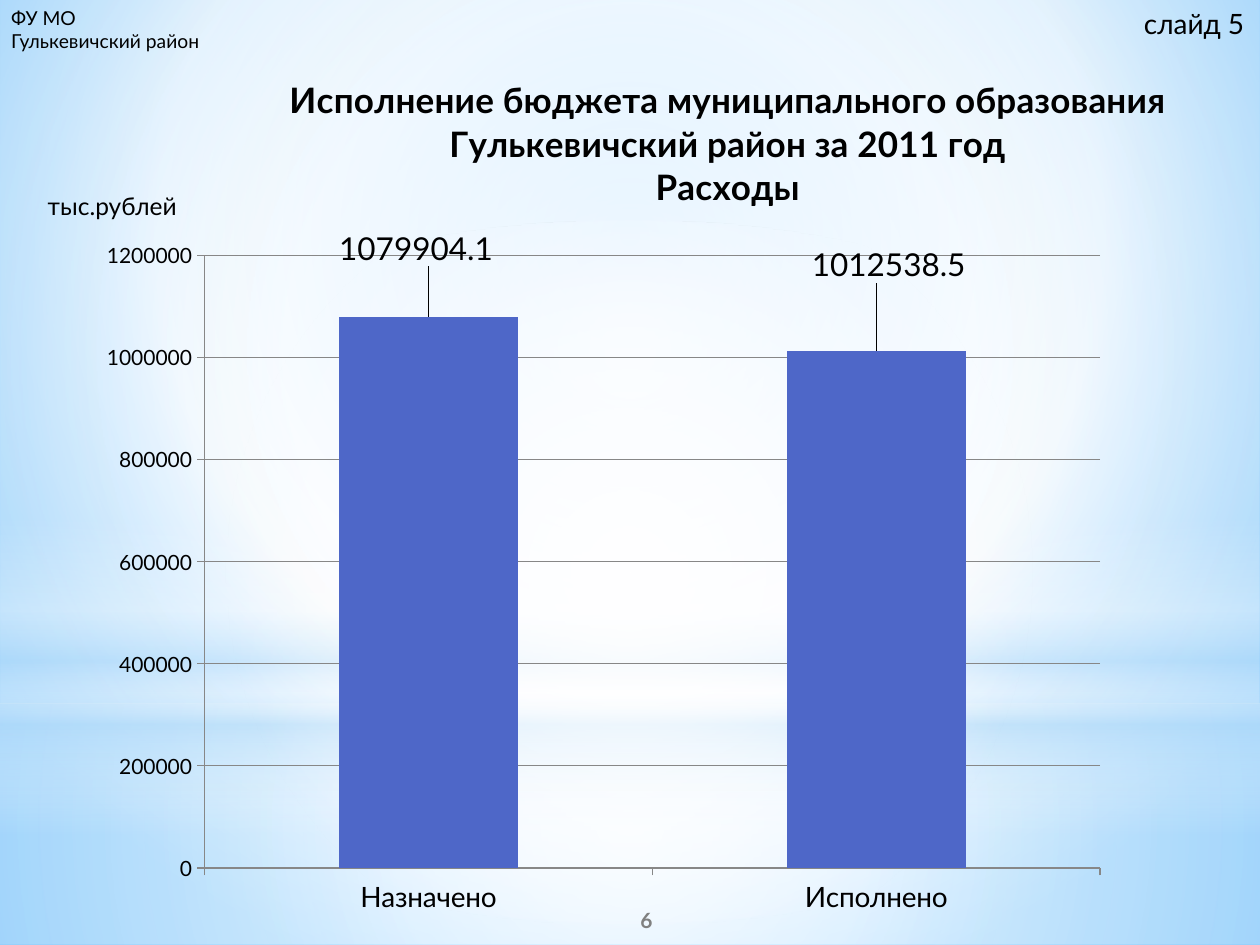
"""Build the budget expenditure slide with a column chart of planned and actual spending."""
import pptx
import pptx.chart.data
import pptx.dml.color
import pptx.enum.chart
import pptx.enum.shapes
import pptx.enum.text
import pptx.oxml
import pptx.oxml.ns
import pptx.util

Pt = pptx.util.Pt
ALIGN = pptx.enum.text.PP_ALIGN
ANCHOR = pptx.enum.text.MSO_ANCHOR
SHAPE = pptx.enum.shapes.MSO_SHAPE
CHART = pptx.enum.chart
FONT = "Lato"
GRID = "878787"
CENTER = (50, 50, 50, 50)

BACKDROP = [(0, "9ED5FF", 100), (60, "FFFFFF", 100), (100, "5BB9FF", 100)]
BACKDROP_FOCUS = (20, 10, 20, 60)
LAYERS = [
    (SHAPE.RECTANGLE, (0, 401.8, 720, 138.2), CENTER,
     [(0, "FFFFFF", 91), (37, "FFFFFF", 76), (100, "B4DCFA", 79)]),
    (SHAPE.RECTANGLE, (0, 0, 720, 401.8), CENTER,
     [(0, "FFFFFF", 89), (48, "FFFFFF", 62), (100, "B4DCFA", 79)]),
    (SHAPE.RECTANGLE, (0, 296.6, 720, 180), None,
     [(0, "FFFFFF", 0), (29, "FFFFFF", 30), (45, "B4DCFA", 40),
      (55, "FFFFFF", 26), (65, "B4DCFA", 60), (100, "FFFFFF", 0)]),
    (SHAPE.OVAL, (0, 126, 720, 401.8), CENTER,
     [(0, "FFFFFF", 100), (56, "FFFFFF", 0)]),
]
CAPTIONS = [
    ("ФУ МО Гулькевичский район", (-0.7, 0, 124.6, 17.3), 11),
    ("слайд 5", (646.6, 0, 73.4, 26.6), 16),
    ("тыс.рублей", (20.2, 105.8, 89.3, 24.5), 14),
]
PAGE_NUMBER = ("6", (297.4, 511.2, 144, 28.8), 12)
TITLE = ["Исполнение бюджета муниципального образования Гулькевичский район за 2011 год",
         "Расходы"]
SPENDING = {"Назначено": 1079904.1, "Исполнено": 1012538.5}
LABEL_SHIFTS = [(-0.01, -0.05), (0.01, -0.07)]
CHART_BOX = (-0.7, 25.9, 712.8, 510.5)


def color(value):
    return pptx.dml.color.RGBColor.from_string(value)


def points(lengths):
    return [Pt(length) for length in lengths]


def set_gradient(fill, holder, stops, focus):
    fill.solid()
    solid = holder.find(".//" + pptx.oxml.ns.qn("a:solidFill"))
    stop_xml = "".join(
        f'<a:gs pos="{place * 1000}"><a:srgbClr val="{value}">'
        f'<a:alpha val="{opacity * 1000}"/></a:srgbClr></a:gs>'
        for place, value, opacity in stops)
    if focus:
        left, top, right, bottom = [side * 1000 for side in focus]
        direction = (f'<a:path path="circle"><a:fillToRect l="{left}" t="{top}" '
                     f'r="{right}" b="{bottom}"/></a:path>')
    else:
        direction = '<a:lin ang="5400000" scaled="0"/>'
    gradient = pptx.oxml.parse_xml(
        f'<a:gradFill {pptx.oxml.ns.nsdecls("a")} rotWithShape="1">'
        f'<a:gsLst>{stop_xml}</a:gsLst>{direction}</a:gradFill>')
    solid.getparent().replace(solid, gradient)


def set_layout(element, index, inner=False, **values):
    for old in element.findall(pptx.oxml.ns.qn("c:layout")):
        element.remove(old)
    settings = {}
    if inner:
        settings["layoutTarget"] = "inner"
    if inner or "w" not in values and element.tag.endswith("}title"):
        settings.update(xMode="edge", yMode="edge")
    settings.update(values)
    body = "".join(f'<c:{name} val="{value}"/>' for name, value in settings.items())
    element.insert(index, pptx.oxml.parse_xml(
        f'<c:layout {pptx.oxml.ns.nsdecls("c")}>'
        f'<c:manualLayout>{body}</c:manualLayout></c:layout>'))


def style_font(font, size, value="000000", bold=False):
    font.name, font.size, font.bold = FONT, Pt(size), bold
    font.color.rgb = color(value)


def add_text(slide, text, place, size, value="000000", bold=False, wrap=False):
    box = slide.shapes.add_textbox(*points(place))
    frame = box.text_frame
    frame.word_wrap = wrap
    para = frame.paragraphs[0]
    para.text = text
    style_font(para.font, size, value, bold)
    return frame


def add_spending_chart(slide):
    data = pptx.chart.data.CategoryChartData()
    data.categories = list(SPENDING)
    data.add_series("Series 1", list(SPENDING.values()))
    chart = slide.shapes.add_chart(
        CHART.XL_CHART_TYPE.COLUMN_CLUSTERED, *points(CHART_BOX), data).chart
    style_font(chart.font, 18)
    chart.has_legend = False

    title = chart.chart_title
    title.text_frame.text = "\n".join(TITLE)
    for para in title.text_frame.paragraphs:
        style_font(para.font, 20, bold=True)
    set_layout(title._element, 1, x=0.23, y=0.03)

    for axis, size in ((chart.category_axis, 16), (chart.value_axis, 12)):
        style_font(axis.tick_labels.font, size)
        axis.major_tick_mark = CHART.XL_TICK_MARK.OUTSIDE
        axis.format.line.color.rgb = color(GRID)
        axis.format.line.width = Pt(0.75)
    chart.value_axis.minimum_scale = 0
    chart.value_axis.has_major_gridlines = True
    gridlines = chart.value_axis.major_gridlines.format.line
    gridlines.color.rgb = color(GRID)
    gridlines.width = Pt(0.75)

    plot = chart.plots[0]
    plot.gap_width = 150
    plot.vary_by_categories = False
    series = plot.series[0]
    series.format.fill.solid()
    series.format.fill.fore_color.rgb = color("4E67C8")
    for index, (across, down) in enumerate(LABEL_SHIFTS):
        label = series.points[index].data_label
        style_font(label.font, 18)
        label.position = CHART.XL_LABEL_POSITION.OUTSIDE_END
    labels = series.data_labels
    labels.show_value = True
    style_font(labels.font, 18)
    for label, (across, down) in zip(
            labels._element.findall(pptx.oxml.ns.qn("c:dLbl")), LABEL_SHIFTS):
        set_layout(label, 1, x=across, y=down)
    plot_area = chart._chartSpace.chart.plotArea
    set_layout(plot_area, 0, inner=True, x=0.165, y=0.235, w=0.718, h=0.686)


def main():
    deck = pptx.Presentation()
    deck.slide_width, deck.slide_height = Pt(720), Pt(540)
    slide = deck.slides.add_slide(deck.slide_layouts[6])
    background = slide.background.fill
    set_gradient(background, slide._element, BACKDROP, BACKDROP_FOCUS)
    for kind, place, focus, stops in LAYERS:
        layer = slide.shapes.add_shape(kind, *points(place))
        layer.shadow.inherit = False
        layer.line.fill.background()
        set_gradient(layer.fill, layer._element.spPr, stops, focus)
    add_spending_chart(slide)
    for caption in CAPTIONS:
        add_text(slide, *caption)
    frame = add_text(slide, *PAGE_NUMBER, value="808080", bold=True, wrap=True)
    frame.vertical_anchor = ANCHOR.MIDDLE
    frame.paragraphs[0].alignment = ALIGN.CENTER
    deck.save("out.pptx")


if __name__ == "__main__":
    main()
